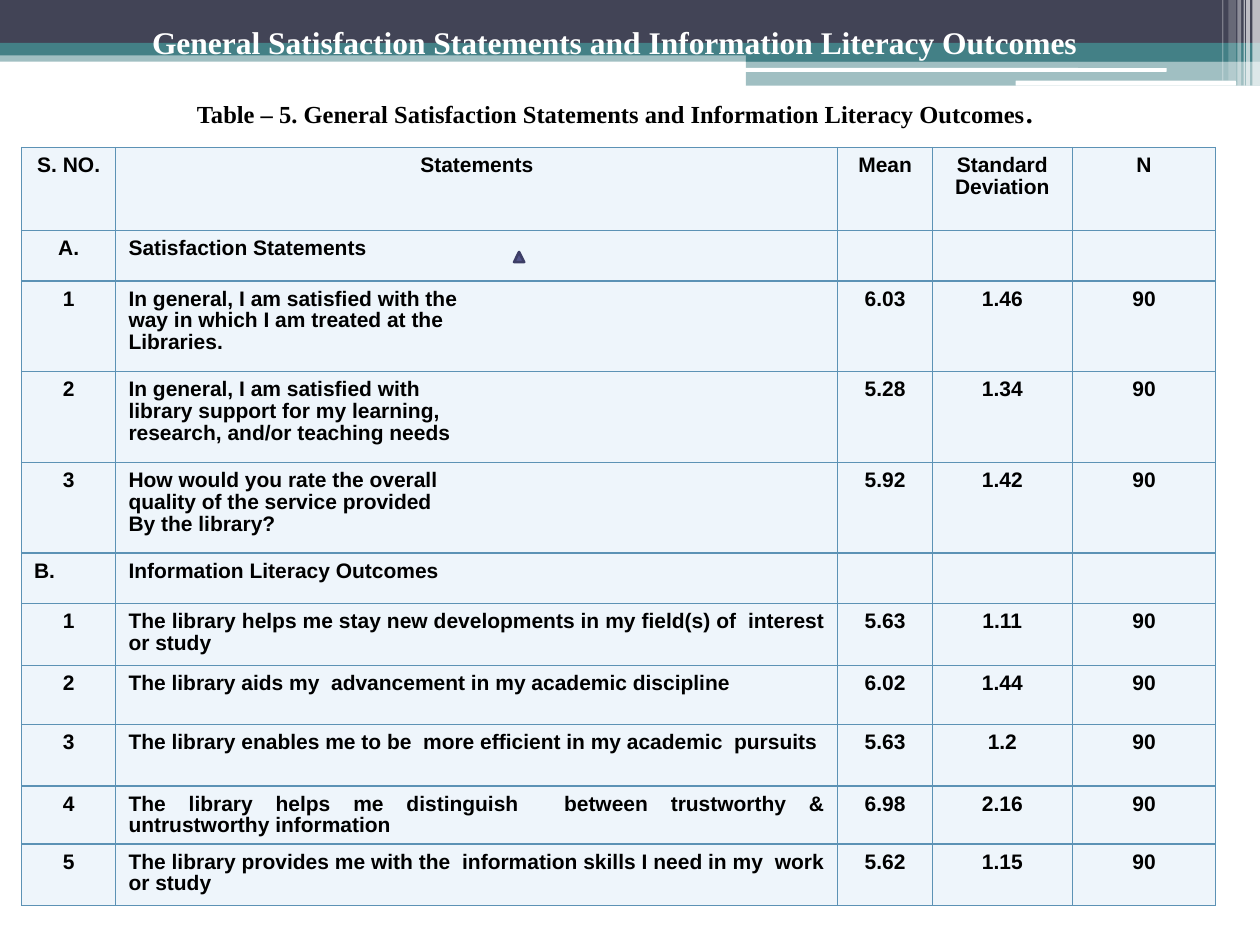
import pptx
import pptx.util
import pptx.dml.color
import pptx.enum.shapes
import pptx.enum.text
import pptx.oxml
import pptx.oxml.ns
from lxml import etree

Inches, Pt = pptx.util.Inches, pptx.util.Pt
KIND = pptx.enum.shapes.MSO_SHAPE
ALIGN = pptx.enum.text.PP_ALIGN
qn = pptx.oxml.ns.qn

HUES = {
    "dark": "424456", "teal": "438086", "white": "FFFFFF", "black": "000000",
    "cell": "EEF5FB", "rule": "5C92B5", "mark": "53548A", "edge": "3D3E66",
}

COLS = [0.75, 5.73, 0.75, 1.11, 1.14]
TALL = [0.66, 0.4, 0.72, 0.72, 0.72, 0.4, 0.49, 0.47, 0.49, 0.46, 0.49]
ROWS = [
    ["S. NO.", "Statements", "Mean", "Standard Deviation", "N"],
    ["A.", "Satisfaction Statements", "", "", ""],
    ["1", "In general, I am satisfied with the\nway in which I am treated at the\nLibraries.",
     "6.03", "1.46", "90"],
    ["2", "In general, I am satisfied with\nlibrary support for my learning,\n"
     "research, and/or teaching needs", "5.28", "1.34", "90"],
    ["3", "How would you rate the overall\nquality of the service provided\nBy the library?",
     "5.92", "1.42", "90"],
    ["B.", "Information Literacy Outcomes", "", "", ""],
    ["1", "The library helps me stay new developments in my field(s) of  interest or study",
     "5.63", "1.11", "90"],
    ["2", "The library aids my  advancement in my academic discipline", "6.02", "1.44", "90"],
    ["3", "The library enables me to be  more efficient in my academic  pursuits",
     "5.63", "1.2", "90"],
    ["4", "The library helps me distinguish  between trustworthy & untrustworthy information",
     "6.98", "2.16", "90"],
    ["5", "The library provides me with the  information skills I need in my  work or study",
     "5.62", "1.15", "90"],
]


def shade(name):
    return pptx.dml.color.RGBColor.from_string(HUES[name])


def draw(slide, kind, box, hue, alpha=100):
    shape = slide.shapes.add_shape(kind, *map(Inches, box))
    shape.shadow.inherit = False
    shape.fill.solid()
    shape.fill.fore_color.rgb = shade(hue)
    shape.line.fill.background()
    if alpha < 100:
        tint = next(shape.element.iter(qn("a:srgbClr")))
        etree.SubElement(tint, qn("a:alpha"), val=str(alpha * 1000))
    return shape


def style(para, face, size, hue, align):
    para.alignment = align
    para.font.size = Pt(size)
    for run in para.runs:
        run.font.name, run.font.size, run.font.bold = face, Pt(size), True
        run.font.color.rgb = shade(hue)


def banner(slide, left, top, width):
    right = left + width
    # Full-width bands, then the step on the right
    for start, drop, high, hue, alpha in [
        (0, 0.4, 0.09, "teal", 50), (0, 0, 0.34, "dark", 100),
        (0, 0.34, 0.1, "teal", 100), (5.92, 0.39, 0.1, "teal", 100),
        (5.92, 0.48, 0.2, "teal", 50),
    ]:
        draw(slide, KIND.RECTANGLE, (left + start, top + drop, width - start, high), hue, alpha)
    # White slots
    for start, drop, wide, high in [(5.91, 0.54, 3.35, 0.03), (8.06, 0.64, 1.75, 0.04)]:
        draw(slide, KIND.ROUNDED_RECTANGLE, (left + start, top + drop, wide, high), "white")
    # Pale stripes, measured back from the right edge
    for back, wide, high, alpha in [
        (0.06, 0.06, 0.68, 65), (0.11, 0.03, 0.68, 65), (0.13, 0.01, 0.68, 60),
        (0.18, 0.03, 0.68, 40), (0.25, 0.06, 0.64, 20), (0.3, 0.01, 0.64, 30),
    ]:
        draw(slide, KIND.RECTANGLE, (right - back, top, wide, high), "white", alpha)


def border(cell):
    props = cell._tc.get_or_add_tcPr()
    for spot, side in enumerate(("a:lnL", "a:lnR", "a:lnT", "a:lnB")):
        line = etree.Element(qn(side), w=str(Pt(0.75)))
        fill = etree.SubElement(line, qn("a:solidFill"))
        etree.SubElement(fill, qn("a:srgbClr"), val=HUES["rule"])
        props.insert(spot, line)


def ratings(slide, left, top):
    frame = slide.shapes.add_table(len(ROWS), len(COLS), Inches(left), Inches(top),
                                   Inches(sum(COLS)), Inches(sum(TALL)))
    table = frame.table
    table.first_row = table.horz_banding = False
    for col, wide in zip(table.columns, COLS):
        col.width = Inches(wide)
    for row, high, texts in zip(table.rows, TALL, ROWS):
        row.height = Inches(high)
        for spot, (cell, text) in enumerate(zip(row.cells, texts)):
            cell.text_frame.text = text
            cell.margin_left = cell.margin_right = Inches(0.1)
            cell.margin_top, cell.margin_bottom = Inches(0.06), Inches(0.05)
            cell.fill.solid()
            cell.fill.fore_color.rgb = shade("cell")
            border(cell)
            align = ALIGN.CENTER
            if text == "B.":
                align = ALIGN.LEFT
            elif spot == 1 and texts is not ROWS[0]:
                align = ALIGN.JUSTIFY
            for para in cell.text_frame.paragraphs:
                para.line_spacing = 0.93
                style(para, "Arial", 12, "black", align)


def marker(slide, left, top, side):
    shape = draw(slide, KIND.ISOSCELES_TRIANGLE, (left, top, side, side), "mark")
    shape.line.color.rgb = shade("edge")
    shape.line.width = Pt(1.5)


def heading(slide, left, top, width, height):
    title = slide.shapes.title
    title.left, title.top = Inches(left), Inches(top)
    title.width, title.height = Inches(width), Inches(height)
    text = title.text_frame
    text.text = ("General Satisfaction Statements and Information Literacy Outcomes\n"
                 "Table – 5. General Satisfaction Statements and Information Literacy Outcomes")
    text.auto_size = pptx.enum.text.MSO_AUTO_SIZE.NONE
    text.vertical_anchor = pptx.enum.text.MSO_ANCHOR.TOP
    text.margin_top, text.margin_bottom = Inches(0.18), 0
    name, label = text.paragraphs
    style(name, "Times New Roman", 18, "white", ALIGN.CENTER)
    label.add_run().text = "."
    style(label, "Times New Roman", 14, "black", ALIGN.CENTER)
    label.runs[-1].font.size = Pt(16)
    name.space_before, label.space_before = Pt(0), Pt(20)
    # Bring the title in front of the banner
    title.element.getparent().append(title.element)


def main():
    deck = pptx.Presentation()
    deck.slide_width, deck.slide_height = Inches(10), Inches(7.5)
    slide = deck.slides.add_slide(deck.slide_layouts[5])
    banner(slide, 0, 0, 10)
    ratings(slide, 0.17, 1.17)
    marker(slide, 4.08, 2, 0.08)
    heading(slide, 0.42, 0, 8.92, 0.92)
    deck.save("out.pptx")


if __name__ == "__main__":
    main()
